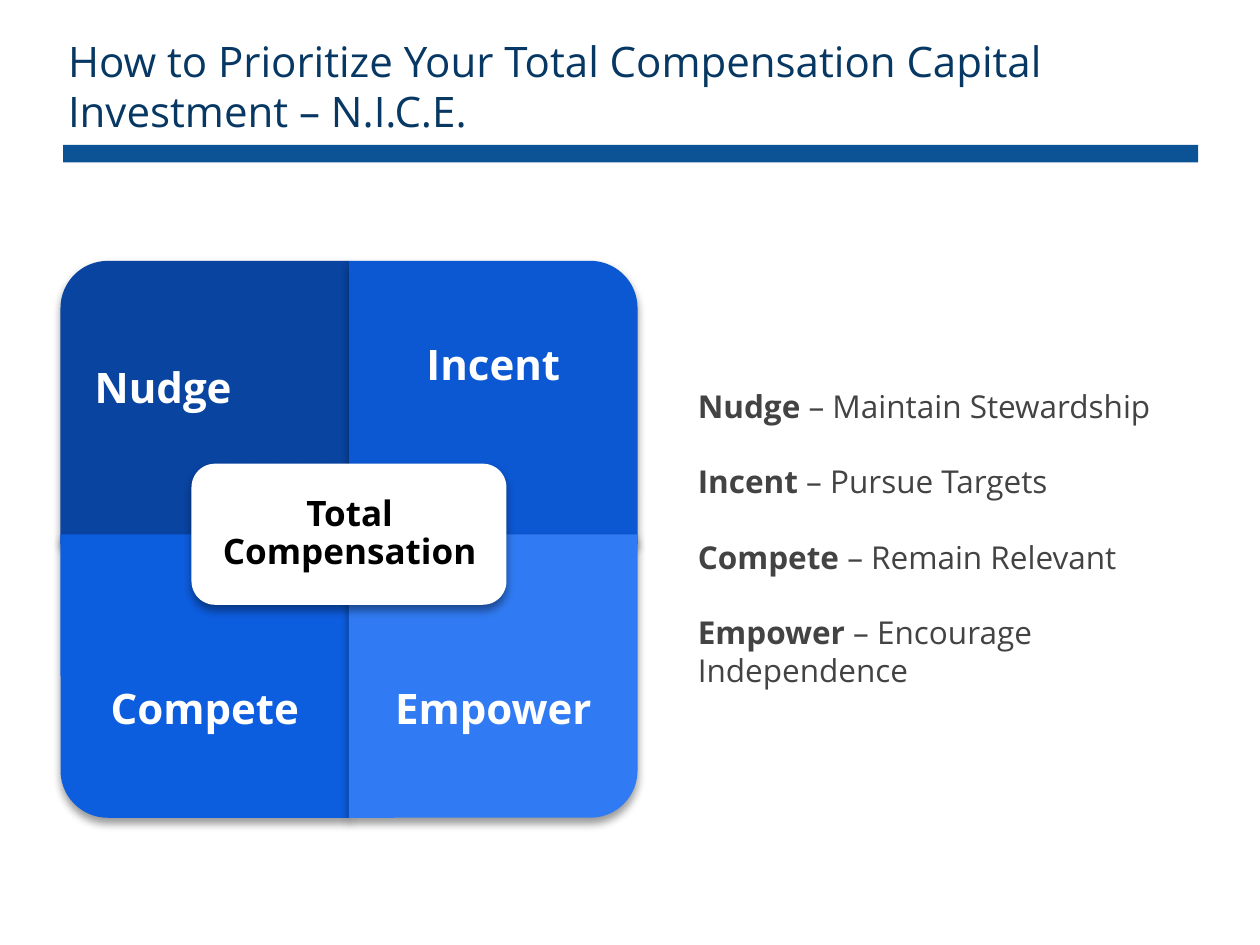
from dataclasses import dataclass

from lxml.etree import SubElement
from pptx import Presentation
from pptx.dml.color import RGBColor
from pptx.enum.shapes import MSO_SHAPE as Shape
from pptx.enum.text import MSO_ANCHOR as Anchor, MSO_AUTO_SIZE as AutoSize, PP_ALIGN as Align
from pptx.oxml.ns import qn
from pptx.util import Inches, Pt


@dataclass(frozen=True)
class Theme:
    font: str = "Open Sans"
    title: str = "073763"
    rule: str = "0B5394"
    nudge: str = "0944A1"
    incent: str = "0C58D3"
    compete: str = "0D5DDF"
    empower: str = "307BF3"
    white: str = "FFFFFF"
    black: str = "000000"
    body: str = "434343"
    heading_size: float = 24
    hub_size: float = 20
    body_size: float = 18


theme = Theme()


def add_block(kind, left, top, width, height, color, rotation=0, raised=True):
    """Add a filled block without outline; a raised one has a soft shadow and a rounded corner."""
    block = slide.shapes.add_shape(kind, Inches(left), Inches(top), Inches(width), Inches(height))
    block.rotation = rotation
    block.fill.solid()
    block.fill.fore_color.rgb = RGBColor.from_string(color)
    block.line.fill.background()
    block.shadow.inherit = False
    if raised:
        block.adjustments[0] = 0.167
        effects = block.element.spPr.find(qn("a:effectLst"))
        shadow = SubElement(effects, qn("a:outerShdw"), blurRad=str(Pt(5.2)), dist=str(Pt(3)),
                            dir="5400000", algn="t", rotWithShape="0")
        tint = SubElement(shadow, qn("a:srgbClr"), val=theme.black)
        SubElement(tint, qn("a:alpha"), val="40000")


def write(box, lines, size, color, para_format, frame_format):
    """Fill a box with lines, each a list of (text, bold) runs."""
    frame = box.text_frame
    for name, value in {"word_wrap": True, "auto_size": AutoSize.NONE, **frame_format}.items():
        setattr(frame, name, value)
    for index, runs in enumerate(lines):
        paragraph = frame.add_paragraph() if index else frame.paragraphs[0]
        for name, value in para_format.items():
            if index or name != "space_before":
                setattr(paragraph, name, value)
        for text, bold in runs:
            run = paragraph.add_run()
            run.text = text
            run.font.color.rgb = RGBColor.from_string(color)
            for name, value in {"name": theme.font, "size": Pt(size), "bold": bold}.items():
                setattr(run.font, name, value)


deck = Presentation()
deck.slide_width, deck.slide_height = Inches(10), Inches(7.5)
slide = deck.slides.add_slide(deck.slide_layouts[5])

# Title and the rule below it
title = slide.shapes.title
title_place = {"left": 0.44, "top": 0.23, "width": 8.83, "height": 0.92}
for name, value in title_place.items():
    setattr(title, name, Inches(value))
headline = "How to Prioritize Your Total Compensation Capital Investment – N.I.C.E."
write(title, [[(headline, False)]], theme.heading_size, theme.title,
      {"alignment": Align.LEFT}, {"vertical_anchor": Anchor.TOP})
add_block(Shape.RECTANGLE, 0.5, 1.15, 9.01, 0.14, theme.rule, raised=False)

# Four quadrants, each turned so that its round corner points outwards
matrix_left, quad_width, quad_height = 0.48, 2.29, 2.25
row_tops, label_tops, label_height = (2.07, 4.24), (2.07, 4.8), 1.69
centered = {"alignment": Align.CENTER, "line_spacing": 0.9}
label_margins = {f"margin_{side}": Inches(0.19) for side in ("left", "top", "right", "bottom")}
nudge_offset = {"margin_right": Inches(0.85), "margin_top": Inches(0.54)}
quadrants = [
    ("Nudge", theme.nudge, 0, 0, 270, nudge_offset),
    ("Incent", theme.incent, 0, 1, 0, {}),
    ("Compete", theme.compete, 1, 0, 180, {}),
    ("Empower", theme.empower, 1, 1, 90, {}),
]
for label, color, row, column, rotation, offset in quadrants:
    left = matrix_left + column * quad_width
    # A quarter turn swaps width and height around the same centre
    width, height = (quad_height, quad_width) if rotation % 180 else (quad_width, quad_height)
    add_block(Shape.ROUND_1_RECTANGLE, left + (quad_width - width) / 2,
              row_tops[row] + (quad_height - height) / 2, width, height, color, rotation)
    label_box = slide.shapes.add_textbox(Inches(left), Inches(label_tops[row]),
                                         Inches(quad_width), Inches(label_height))
    write(label_box, [[(label, True)]], theme.heading_size, theme.white, centered,
          {"vertical_anchor": Anchor.MIDDLE, **label_margins, **offset})

# Hub over the centre of the quadrants
add_block(Shape.ROUNDED_RECTANGLE, 1.52, 3.68, 2.5, 1.12, theme.white)
hub_label = slide.shapes.add_textbox(Inches(1.58), Inches(3.73), Inches(2.39), Inches(1.02))
hub_margins = {name: Inches(0.08) for name in label_margins}
write(hub_label, [[("Total Compensation", True)]], theme.hub_size, theme.black, centered,
      {"vertical_anchor": Anchor.MIDDLE, **hub_margins})

# Meaning of each letter
meanings = {
    "Nudge": "Maintain Stewardship",
    "Incent": "Pursue Targets",
    "Compete": "Remain Relevant",
    "Empower": "Encourage Independence",
}
legend = slide.shapes.add_textbox(Inches(5.44), Inches(3.02), Inches(4.47), Inches(2.52))
write(legend, [[(term, True), (f" – {meaning}", False)] for term, meaning in meanings.items()],
      theme.body_size, theme.body, {"space_before": Pt(21.5)},
      {"auto_size": AutoSize.SHAPE_TO_FIT_TEXT})

deck.save("out.pptx")
